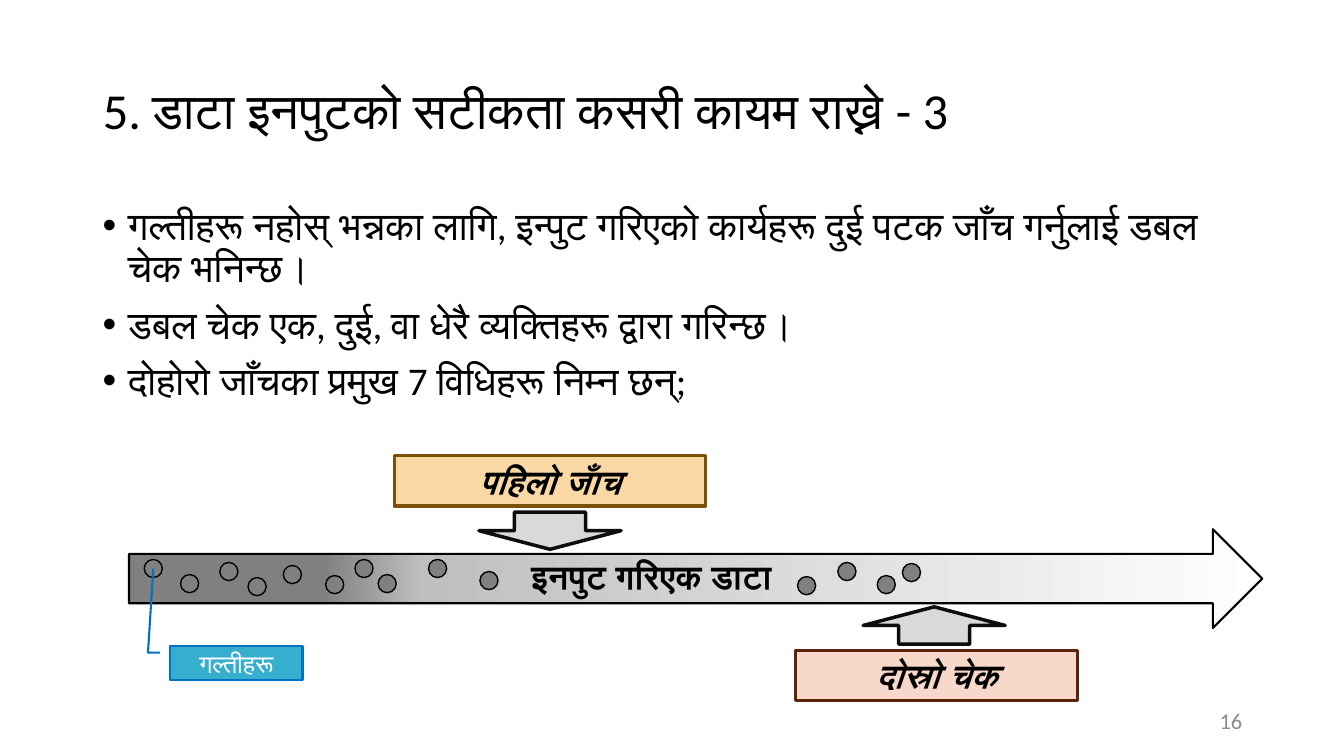
"""Build the slide on keeping data input accurate by double checking."""
from lxml.etree import SubElement
from pptx import Presentation
from pptx.dml.color import RGBColor
from pptx.enum.shapes import MSO_SHAPE
from pptx.enum.text import MSO_ANCHOR, MSO_AUTO_SIZE, PP_ALIGN
from pptx.oxml.ns import qn
from pptx.util import Inches, Pt

COLORS = {
    "black": "000000", "white": "FFFFFF", "silver": "BFBFBF", "grey": "808080",
    "number": "8C8C8C", "arrow": "D9D9D9", "arrow_edge": "0D0D0D",
    "first": "F9D8A3", "first_edge": "7D5008",
    "second": "F8D8CA", "second_edge": "5C240C",
    "errors": "36AFCE", "errors_edge": "0070C0",
}

presentation = Presentation()
presentation.slide_width = Inches(13.33)
presentation.slide_height = Inches(7.5)
slide = presentation.slides.add_slide(presentation.slide_layouts[5])


def add_figure(kind, box, fill, edge, width):
    figure = slide.shapes.add_shape(kind, *map(Inches, box))
    figure.shadow.inherit = False
    figure.fill.solid()
    figure.fill.fore_color.rgb = RGBColor.from_string(COLORS[fill])
    figure.line.color.rgb = RGBColor.from_string(COLORS[edge])
    figure.line.width = Pt(width)
    return figure


def write(holder, lines, size, color="black", align=PP_ALIGN.CENTER,
          anchor=MSO_ANCHOR.TOP, bold=False, italic=False):
    frame = holder.text_frame
    frame.word_wrap = True
    frame.auto_size = MSO_AUTO_SIZE.NONE
    frame.vertical_anchor = anchor
    for index, line in enumerate(lines):
        paragraph = frame.add_paragraph() if index else frame.paragraphs[0]
        paragraph.alignment = align
        run = paragraph.add_run()
        run.text = line
        run.font.name = "Calibri"
        run.font.size = Pt(size)
        run.font.bold = bold
        run.font.italic = italic
        run.font.color.rgb = RGBColor.from_string(COLORS[color])
    return frame.paragraphs


title = slide.shapes.title
title.left, title.top = Inches(0.92), Inches(0.4)
title.width, title.height = Inches(11.5), Inches(1.45)
heading = write(title, ["5. डाटा इनपुटको सटीकता कसरी कायम राख्ने - 3"], 36,
                align=PP_ALIGN.LEFT, anchor=MSO_ANCHOR.MIDDLE)
heading[0].line_spacing = 0.9

points = slide.shapes.add_textbox(Inches(0.92), Inches(2), Inches(11.5), Inches(2.4))
bullets = write(points, [
    "गल्तीहरू नहोस् भन्नका लागि, इन्पुट गरिएको कार्यहरू दुई पटक जाँच गर्नुलाई डबल चेक भनिन्छ।",
    "डबल चेक एक, दुई, वा धेरै व्यक्तिहरू द्वारा गरिन्छ।",
    "दोहोरो जाँचका प्रमुख 7 विधिहरू निम्न छन्;",
], 28, align=PP_ALIGN.LEFT)
for bullet in bullets:
    bullet.line_spacing = 0.9
    bullet.space_before = Pt(10)
    properties = bullet._p.get_or_add_pPr()
    properties.set("marL", str(Inches(0.25)))
    properties.set("indent", str(-Inches(0.25)))
    SubElement(properties, qn("a:buFont")).set("typeface", "Arial")
    SubElement(properties, qn("a:buChar")).set("char", "•")

data_flow = add_figure(MSO_SHAPE.RIGHT_ARROW, (1.28, 5.25, 11.24, 0.98), "white", "black", 1.5)
data_flow.fill.gradient()
data_flow.fill.gradient_angle = 180
stops = data_flow._element.spPr.find(qn("a:gradFill")).find(qn("a:gsLst"))
for stop in list(stops):
    stops.remove(stop)
for percent, shade in [(0, "white"), (74, "silver"), (83, "grey"), (100, "grey")]:
    stop = SubElement(stops, qn("a:gs"))
    stop.set("pos", str(percent * 1000))
    SubElement(stop, qn("a:srgbClr")).set("val", COLORS[shade])

flow_label = slide.shapes.add_textbox(Inches(1.1), Inches(5.47), Inches(10.72), Inches(0.5))
write(flow_label, ["इनपुट गरिएक डाटा"], 24, bold=True)

checks = [
    ("पहिलो जाँच", (3.91, 4.52, 3.09, 0.5), "first", (4.75, 5.08), 0),
    ("दोस्रो चेक", (7.89, 6.45, 2.8, 0.5), "second", (8.56, 6.02), 180),
]
for label, box, color, pointer_corner, turn in checks:
    check = add_figure(MSO_SHAPE.RECTANGLE, box, color, color + "_edge", 2.25)
    write(check, [label], 24, bold=True, italic=True)
    pointer = add_figure(MSO_SHAPE.DOWN_ARROW, (*pointer_corner, 1.41, 0.37),
                         "arrow", "arrow_edge", 2.5)
    pointer.rotation = turn

error_dots = [
    (1.43, 5.55), (1.79, 5.7), (2.18, 5.58), (2.46, 5.73), (2.81, 5.61),
    (3.23, 5.71), (3.52, 5.55), (3.75, 5.7), (4.25, 5.55), (4.76, 5.67),
    (7.91, 5.72), (8.31, 5.58), (8.7, 5.71), (8.95, 5.59),
]
for corner in error_dots:
    add_figure(MSO_SHAPE.OVAL, (*corner, 0.18, 0.18), "grey", "black", 1)

errors = add_figure(MSO_SHAPE.LINE_CALLOUT_2, (1.69, 6.41, 1.31, 0.34),
                    "errors", "errors_edge", 1.5)
for index, ratio in enumerate([0.19, -0.08, 0.19, -0.17, -2.26, -0.13]):
    errors.adjustments[index] = ratio
write(errors, ["गल्तीहरू"], 18, "white", anchor=MSO_ANCHOR.MIDDLE)

page_number = slide.shapes.add_textbox(Inches(9.42), Inches(6.95), Inches(3), Inches(0.4))
write(page_number, ["16"], 16, "number", PP_ALIGN.RIGHT, MSO_ANCHOR.MIDDLE)

presentation.save("out.pptx")
